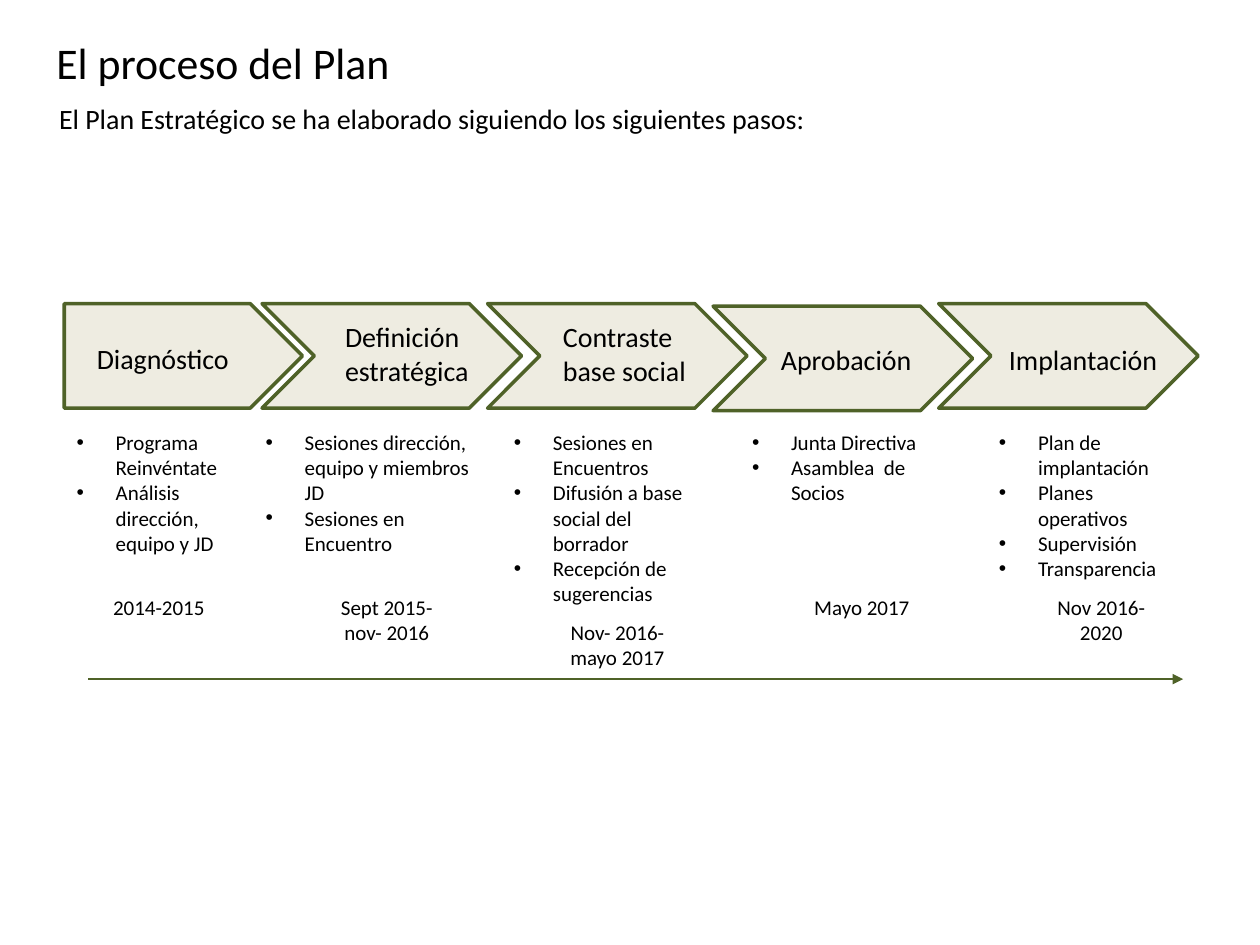
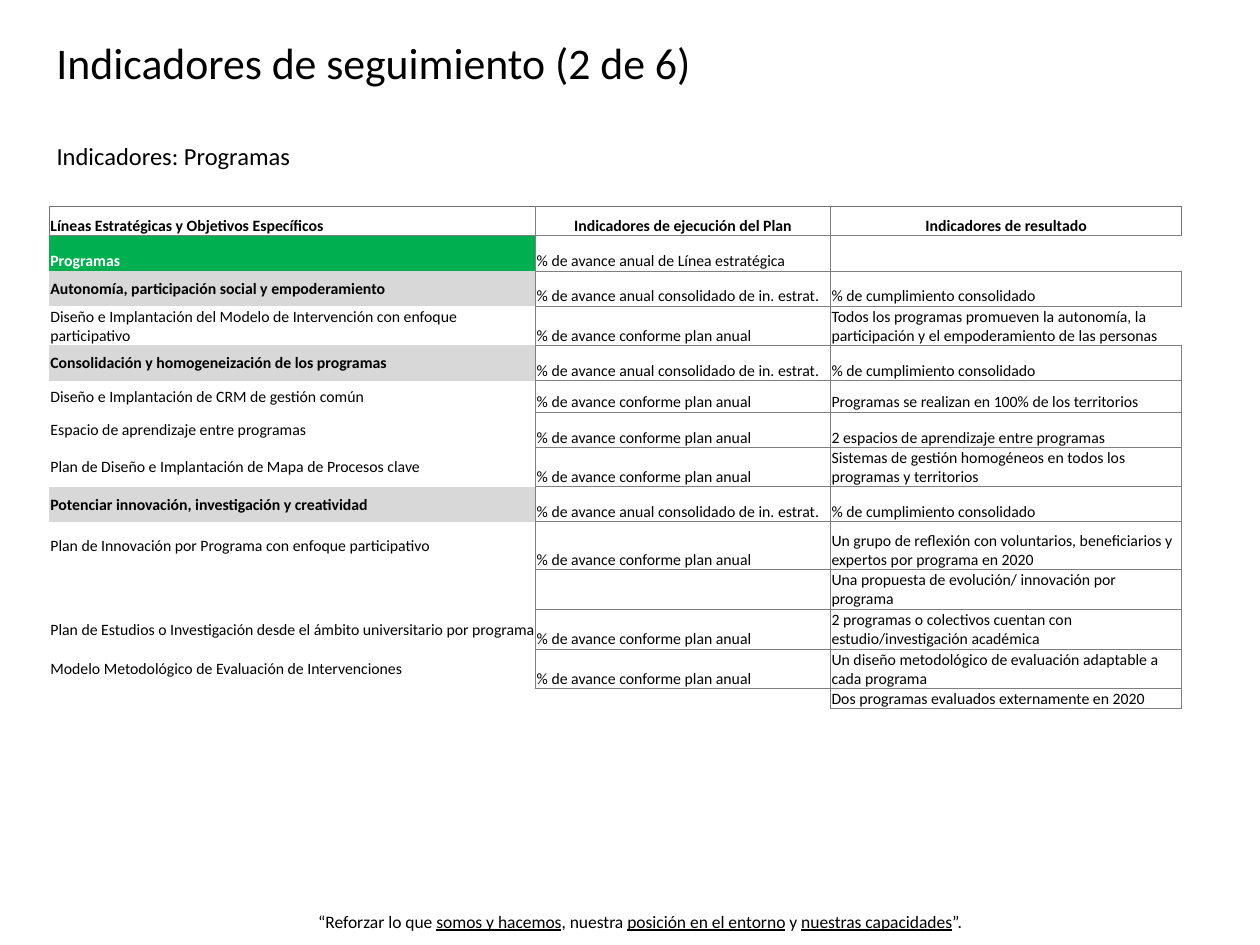
from dataclasses import dataclass

from lxml import etree
from pptx import Presentation
from pptx.dml.color import RGBColor
from pptx.enum.shapes import MSO_CONNECTOR, MSO_SHAPE
from pptx.enum.text import MSO_ANCHOR as Anchor, PP_ALIGN as Align
from pptx.oxml.ns import qn
from pptx.slide import Slide
from pptx.table import _Cell as Cell
from pptx.text.text import _Paragraph as Paragraph
from pptx.util import Inches, Pt

# Shared style
FONT = "Calibri"
BLACK, WHITE = "000000", "FFFFFF"
CREAM, OLIVE = "EEECE1", "4F6228"
GREEN, LIGHT_GRAY = "00B050", "D8D8D8"
BORDER, OUTER_BORDER = "7F7F7F", "757171"

Box = tuple[float, float, float, float]


@dataclass(frozen=True)
class Step:
    """A stage of the plan: its arrow, label, tasks and dates."""
    label: str
    label_box: Box
    tasks: tuple[str, ...]
    tasks_left: float
    tasks_width: float
    dates: str
    dates_left: float
    dates_top: float = 4.67
    arrow_top: float = 2.41


@dataclass(frozen=True)
class Indicator:
    """A row of the indicator table."""
    height: float
    goal: str
    execution: str
    result: str
    goal_fill: str = ""
    open_right: bool = False


STEPS = (
    Step("Diagnóstico", (0.67, 2.66, 1.5, 0.37),
         ("Programa Reinvéntate", "Análisis dirección, equipo y JD"),
         0.51, 1.65, "2014-2015", 0.67),
    Step("Definición estratégica", (2.64, 2.49, 1.5, 0.64),
         ("Sesiones dirección, equipo y miembros JD", "Sesiones en Encuentro"),
         2.01, 1.88, "Sept 2015- nov- 2016", 2.48),
    Step("Contraste base social", (4.37, 2.49, 1.5, 0.64),
         ("Sesiones en Encuentros", "Difusión a base social del borrador",
          "Recepción de sugerencias"),
         3.98, 1.65, "Nov- 2016- mayo 2017", 4.31, dates_top=4.87),
    Step("Aprobación", (6.1, 2.67, 1.5, 0.37),
         ("Junta Directiva", "Asamblea  de Socios"),
         5.87, 1.65, "Mayo 2017", 6.25, arrow_top=2.43),
    Step("Implantación", (7.91, 2.67, 1.5, 0.37),
         ("Plan de implantación", "Planes operativos", "Supervisión", "Transparencia"),
         7.83, 1.65, "Nov 2016- 2020", 8.15),
)

HEADERS = ("Líneas Estratégicas y Objetivos Específicos",
           "Indicadores de ejecución del Plan", "Indicadores de resultado")
HEADER_HEIGHT = 0.23
COLUMN_WIDTHS = (3.86, 2.34, 2.79)
PLAN = "% de avance conforme plan anual"
CONSOLIDATED = "% de avance anual consolidado de in. estrat."
FULFILMENT = "% de cumplimiento consolidado"

INDICATORS = (
    Indicator(0.28, "Programas", "% de avance anual de Línea estratégica", "",
              GREEN, open_right=True),
    Indicator(0.28, "Autonomía, participación social y empoderamiento",
              CONSOLIDATED, FULFILMENT, LIGHT_GRAY),
    Indicator(0.29, "Diseño e Implantación del Modelo de Intervención con enfoque participativo",
              PLAN, "Todos los programas promueven la autonomía, la participación "
              "y el empoderamiento de las personas", open_right=True),
    Indicator(0.28, "Consolidación y homogeneización de los programas",
              CONSOLIDATED, FULFILMENT, LIGHT_GRAY),
    Indicator(0.25, "Diseño e Implantación de CRM de gestión común",
              PLAN, "Programas se realizan en 100% de los territorios"),
    Indicator(0.28, "Espacio de aprendizaje entre programas",
              PLAN, "2 espacios de aprendizaje entre programas"),
    Indicator(0.26, "Plan de Diseño e Implantación de Mapa de Procesos clave",
              PLAN, "Sistemas de gestión homogéneos en todos los programas y territorios"),
    Indicator(0.28, "Potenciar innovación, investigación y creatividad",
              CONSOLIDATED, FULFILMENT, LIGHT_GRAY),
    Indicator(0.38, "Plan de Innovación por Programa con enfoque participativo",
              PLAN, "Un grupo de reflexión con voluntarios, beneficiarios y expertos "
              "por programa en 2020"),
    Indicator(0.28, "", "", "Una propuesta de evolución/ innovación por programa"),
    Indicator(0.32, "Plan de Estudios o Investigación desde el ámbito universitario por programa",
              PLAN, "2 programas o colectivos cuentan con estudio/investigación académica"),
    Indicator(0.31, "Modelo Metodológico de Evaluación de Intervenciones",
              PLAN, "Un diseño metodológico de evaluación adaptable a cada programa"),
    Indicator(0.16, "", "", "Dos programas evaluados externamente en 2020"),
)


def color(value: str) -> RGBColor:
    return RGBColor.from_string(value)


def inches(box: Box) -> list[Inches]:
    return [Inches(length) for length in box]


def write(paragraph: Paragraph, text: str, *, size: float, ink: str = BLACK,
          bold: bool = False, align: Align = Align.LEFT) -> None:
    """Write text; parts between underscores are underlined."""
    paragraph.alignment = align
    if not text:
        paragraph._p.get_or_add_endParaRPr().set("sz", str(int(size * 100)))
        return
    for index, part in enumerate(text.split("_")):
        run = paragraph.add_run()
        run.text = part
        font = run.font
        font.name, font.size, font.bold = FONT, Pt(size), bold
        font.underline = index % 2 == 1
        font.color.rgb = color(ink)


def indent(paragraph: Paragraph, left: float, first: float = 0, bullet: str = "") -> None:
    properties = paragraph._p.get_or_add_pPr()
    properties.set("marL", str(Inches(left)))
    properties.set("indent", str(Inches(first)))
    if bullet:
        etree.SubElement(properties, qn("a:buFont")).set("typeface", "Arial")
        etree.SubElement(properties, qn("a:buChar")).set("char", bullet)


def add_text(slide: Slide, box: Box, *texts: str, size: float, left: float = 0,
             bullet: str = "", anchor: Anchor = Anchor.TOP,
             align: Align = Align.LEFT) -> None:
    frame = slide.shapes.add_textbox(*inches(box)).text_frame
    frame.word_wrap = True
    frame.vertical_anchor = anchor
    for index, text in enumerate(texts):
        paragraph = frame.add_paragraph() if index else frame.paragraphs[0]
        write(paragraph, text, size=size, align=align)
        if left:
            indent(paragraph, left, -left if bullet else 0, bullet)


def add_slide(presentation: Presentation, title: str) -> Slide:
    slide = presentation.slides.add_slide(presentation.slide_layouts[6])
    add_text(slide, (0.35, 0.22, 9, 0.54), title, size=25, anchor=Anchor.MIDDLE)
    return slide


def add_arrow_shape(slide: Slide, kind: MSO_SHAPE, box: Box) -> None:
    shape = slide.shapes.add_shape(kind, *inches(box))
    shape.shadow.inherit = False
    shape.fill.solid()
    shape.fill.fore_color.rgb = color(CREAM)
    shape.line.color.rgb = color(OLIVE)
    shape.line.width = Pt(2)


def add_timeline(slide: Slide, left: float, right: float, top: float) -> None:
    line = slide.shapes.add_connector(
        MSO_CONNECTOR.STRAIGHT, *inches((left, top, right, top)))
    line.line.color.rgb = color(OLIVE)
    line.line.width = Pt(0.75)
    etree.SubElement(line.line._get_or_add_ln(), qn("a:tailEnd")).set("type", "triangle")
    etree.SubElement(line._element.spPr, qn("a:effectLst"))


def set_borders(cell: Cell, sides: dict[str, str]) -> None:
    """Draw the given sides (L, R, T, B) and hide the others."""
    properties = cell._tc.get_or_add_tcPr()
    for index, side in enumerate("LRTB"):
        border = etree.Element(qn(f"a:ln{side}"), w=str(Pt(0.5)))
        if side in sides:
            fill = etree.SubElement(border, qn("a:solidFill"))
            etree.SubElement(fill, qn("a:srgbClr")).set("val", sides[side])
        else:
            etree.SubElement(border, qn("a:noFill"))
        properties.insert(index, border)


def fill_cell(cell: Cell, text: str, *, fill: str, borders: dict[str, str],
              ink: str = BLACK, bold: bool = False, align: Align = Align.LEFT,
              anchor: Anchor = Anchor.BOTTOM) -> None:
    cell.margin_left = cell.margin_right = cell.margin_top = Inches(0.01)
    cell.margin_bottom = 0
    cell.vertical_anchor = anchor
    write(cell.text_frame.paragraphs[0], text, size=9, ink=ink, bold=bold, align=align)
    if fill:
        cell.fill.solid()
        cell.fill.fore_color.rgb = color(fill)
    else:
        cell.fill.background()
    set_borders(cell, borders)


def gray(sides: str) -> dict[str, str]:
    return dict.fromkeys(sides, BORDER)


def add_indicator_table(slide: Slide) -> None:
    heights = [HEADER_HEIGHT] + [indicator.height for indicator in INDICATORS]
    table = slide.shapes.add_table(
        len(heights), len(COLUMN_WIDTHS),
        *inches((0.39, 1.64, sum(COLUMN_WIDTHS), sum(heights)))).table
    table.first_row = table.horz_banding = False
    for column, width in zip(table.columns, COLUMN_WIDTHS):
        column.width = Inches(width)
    for row, height in zip(table.rows, heights):
        row.height = Inches(height)

    # Header row, darker on its outer edges
    for index, text in enumerate(HEADERS):
        outer = "T" + {0: "L", 2: "R"}.get(index, "")
        fill_cell(table.cell(0, index), text, bold=True, fill=WHITE if index else "",
                  borders=gray("LRTB") | dict.fromkeys(outer, OUTER_BORDER),
                  align=Align.CENTER if index else Align.LEFT)

    # Goals, execution and result indicators
    for number, indicator in enumerate(INDICATORS, start=1):
        first, last = number == 1, number == len(INDICATORS)
        fill_cell(table.cell(number, 0), indicator.goal, fill=indicator.goal_fill,
                  borders=gray("TR" if first else "" if last else "R"),
                  ink=WHITE if first else BLACK, bold=bool(indicator.goal_fill),
                  anchor=Anchor.BOTTOM if first else Anchor.MIDDLE)
        fill_cell(table.cell(number, 1), indicator.execution, fill=WHITE,
                  borders=gray("TR" if last else "LRTB"))
        fill_cell(table.cell(number, 2), indicator.result, fill=WHITE,
                  borders=gray("LTB" if indicator.open_right else "LRTB"))


def build_process_slide(presentation: Presentation) -> None:
    slide = add_slide(presentation, "El proceso del Plan")
    add_text(slide, (0.08, 0.76, 9.88, 0.37),
             "El Plan Estratégico se ha elaborado siguiendo los siguientes pasos:",
             size=16, left=0.29)
    for index, step in enumerate(STEPS):
        if index:
            left = 2.08 + 1.79 * (index - 1)
            add_arrow_shape(slide, MSO_SHAPE.CHEVRON, (left, step.arrow_top, 2.06, 0.83))
        else:
            add_arrow_shape(slide, MSO_SHAPE.PENTAGON, (0.51, step.arrow_top, 1.89, 0.83))
        add_text(slide, step.label_box, step.label, size=16)
        add_text(slide, (step.tasks_left, 3.36, step.tasks_width, 1.31), *step.tasks,
                 size=12, left=0.31, bullet="•")
        add_text(slide, (step.dates_left, step.dates_top, 1.18, 0.5), step.dates,
                 size=12, align=Align.CENTER)
    add_timeline(slide, 0.7, 9.39, 5.39)


def build_indicators_slide(presentation: Presentation) -> None:
    slide = add_slide(presentation, "Indicadores de seguimiento (2 de 6)")
    add_text(slide, (2.04, 7.18, 6.08, 0.27),
             "“Reforzar lo que _somos y hacemos_, nuestra _posición en el entorno_"
             " y _nuestras capacidades_”.", size=10, align=Align.CENTER)
    add_text(slide, (0.35, 1.07, 9.35, 0.34), "Indicadores: Programas", size=14)
    add_indicator_table(slide)


def main() -> None:
    presentation = Presentation()
    presentation.slide_width, presentation.slide_height = Inches(10), Inches(7.5)
    build_process_slide(presentation)
    build_indicators_slide(presentation)
    presentation.save("out.pptx")


if __name__ == "__main__":
    main()
